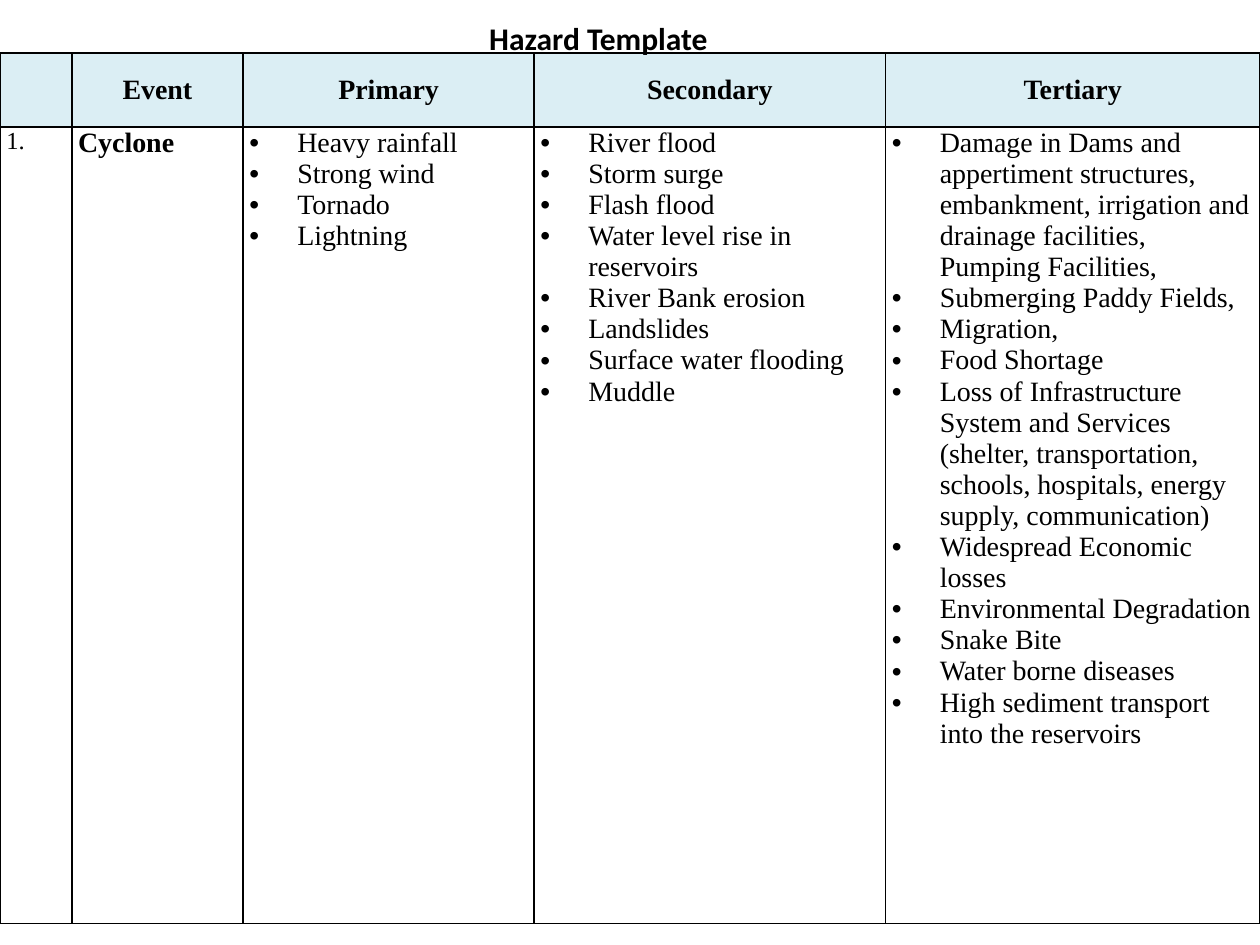
import pptx
import pptx.dml.color
import pptx.enum.text
import pptx.oxml
import pptx.oxml.ns
import pptx.util
from pptx.util import Inches

COLORS = {"ink": "000000", "header": "DBEEF4"}
ALIGN = pptx.enum.text.PP_ALIGN
ANCHOR = pptx.enum.text.MSO_ANCHOR
NS = pptx.oxml.ns.nsdecls("a")

COL_WIDTHS = [0.57, 1.36, 2.31, 2.79, 2.97]
ROW_HEIGHTS = [0.59, 6.32]
HEADINGS = ["", "Event", "Primary", "Secondary", "Tertiary"]
EFFECTS = [
    ["Heavy rainfall", "Strong wind", "Tornado", "Lightning"],
    ["River flood", "Storm surge", "Flash flood",
     "Water level rise in reservoirs", "River Bank erosion", "Landslides",
     "Surface water flooding", "Muddle"],
    ["Damage in Dams and appertiment structures, embankment, irrigation and "
     "drainage facilities, Pumping Facilities,",
     "Submerging Paddy Fields,", "Migration,", "Food Shortage",
     "Loss of Infrastructure System and Services (shelter, transportation, "
     "schools, hospitals, energy supply, communication)",
     "Widespread Economic losses", "Environmental Degradation", "Snake Bite",
     "Water borne diseases", "High sediment transport into the reservoirs"],
]


class SlideBuilder:
    def __init__(self, prs):
        self.s = prs.slides.add_slide(prs.slide_layouts[5])
        self.title_font = "Calibri"
        self.body_font = "Times New Roman"

    def add_text(self, p, text, font, size, bold=False, align=ALIGN.LEFT):
        p.alignment = align
        r = p.add_run()
        r.text = text
        values = {"name": font, "size": pptx.util.Pt(size), "bold": bold}
        for name, value in values.items():
            setattr(r.font, name, value)
        r.font.color.rgb = pptx.dml.color.RGBColor.from_string(COLORS["ink"])

    def title(self, text, left, top, width, height):
        sp = self.s.shapes.title
        box = {"left": left, "top": top, "width": width, "height": height}
        for name, value in box.items():
            setattr(sp, name, Inches(value))
        tf = sp.text_frame
        tf.auto_size = pptx.enum.text.MSO_AUTO_SIZE.NONE
        tf.vertical_anchor = ANCHOR.TOP
        self.add_text(tf.paragraphs[0], text, self.title_font, 18, True, ALIGN.CENTER)
        # The title overlaps the table's top edge, so it goes in front.
        sp.element.getparent().append(sp.element)

    def table(self, left, top, widths, heights):
        frame = self.s.shapes.add_table(
            len(heights), len(widths), Inches(left), Inches(top),
            Inches(sum(widths)), Inches(sum(heights)))
        table = frame.table
        table.first_row = table.horz_banding = False
        for col, width in zip(table.columns, widths):
            col.width = Inches(width)
        for row, height in zip(table.rows, heights):
            row.height = Inches(height)
        return table

    def cell(self, cell, lines, size=16, bold=False, bullets=False, header=False):
        margins = {"margin_left": 0.05, "margin_right": 0.05,
                   "margin_top": 0, "margin_bottom": 0}
        for name, value in margins.items():
            setattr(cell, name, Inches(value))
        cell.vertical_anchor = ANCHOR.MIDDLE if header else ANCHOR.TOP
        self.borders(cell)
        if header:
            cell.fill.solid()
            cell.fill.fore_color.rgb = pptx.dml.color.RGBColor.from_string(COLORS["header"])
        else:
            cell.fill.background()
        tf = cell.text_frame
        for i, line in enumerate(lines):
            p = tf.add_paragraph() if i else tf.paragraphs[0]
            self.add_text(p, line, self.body_font, size, bold,
                          ALIGN.CENTER if header else ALIGN.LEFT)
            if bullets:
                self.bullet(p)

    def borders(self, cell):
        tcPr = cell._tc.get_or_add_tcPr()
        for side in "LRTB":
            tcPr.append(pptx.oxml.parse_xml(
                f'<a:ln{side} {NS} w="{pptx.util.Pt(1)}"><a:solidFill>'
                f'<a:srgbClr val="{COLORS["ink"]}"/></a:solidFill></a:ln{side}>'))

    def bullet(self, p):
        pPr = p._p.get_or_add_pPr()
        pPr.set("marL", str(Inches(0.38)))
        pPr.set("indent", str(-Inches(0.38)))
        for tag in ('buFont {} typeface="Arial"', 'buChar {} char="•"'):
            pPr.append(pptx.oxml.parse_xml(f"<a:{tag.format(NS)}/>"))


def main():
    prs = pptx.Presentation()
    prs.slide_width, prs.slide_height = Inches(10), Inches(7.5)
    b = SlideBuilder(prs)
    table = b.table(0, 0.42, COL_WIDTHS, ROW_HEIGHTS)
    for col, heading in enumerate(HEADINGS):
        b.cell(table.cell(0, col), [heading] if heading else [], bold=True, header=True)
    b.cell(table.cell(1, 0), ["1."], size=14)
    b.cell(table.cell(1, 1), ["Cyclone"], bold=True)
    for col, effects in enumerate(EFFECTS, start=2):
        b.cell(table.cell(1, col), effects, bullets=True)
    b.title("Hazard Template", 2.75, 0.1, 4, 0.4)
    prs.save("out.pptx")


if __name__ == "__main__":
    main()
